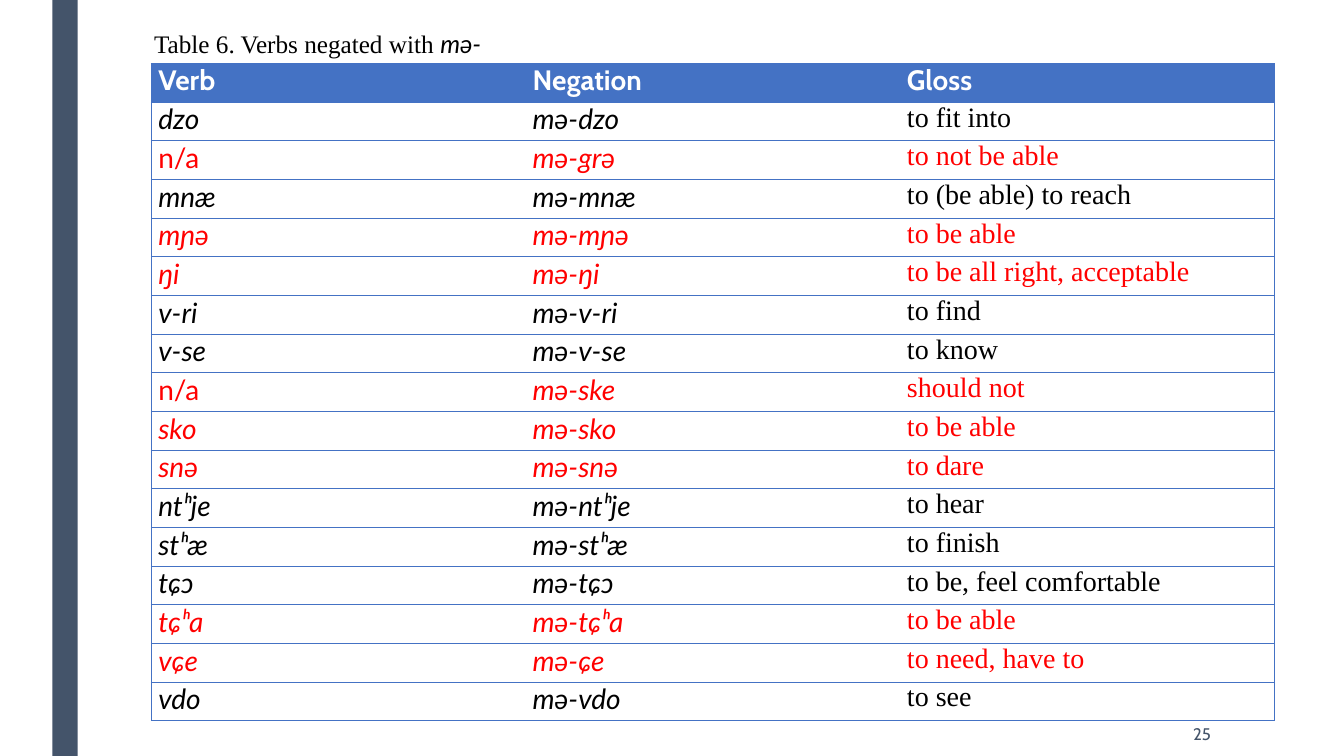
from lxml import etree
from pptx import Presentation
from pptx import util as u
from pptx.dml.color import RGBColor
from pptx.enum import shapes, text
from pptx.oxml.ns import qn

SLATE = RGBColor(0x44, 0x54, 0x6A)
BLUE = RGBColor(0x44, 0x72, 0xC4)
WHITE = RGBColor(0xFF, 0xFF, 0xFF)
BLACK = RGBColor(0, 0, 0)
RED = RGBColor(0xFF, 0, 0)

HEADINGS = ("Verb", "Negation", "Gloss")
# Verb, negated form, gloss, text colour
VERBS = [
    ("dzo", "mə-dzo", "to fit into", BLACK),
    ("n/a", "mə-grə", "to not be able", RED),
    ("mnæ", "mə-mnæ", "to (be able) to reach", BLACK),
    ("mɲə", "mə-mɲə", "to be able", RED),
    ("ŋi", "mə-ŋi", "to be all right, acceptable", RED),
    ("v-ri", "mə-v-ri", "to find", BLACK),
    ("v-se", "mə-v-se", "to know", BLACK),
    ("n/a", "mə-ske", "should not", RED),
    ("sko", "mə-sko", "to be able", RED),
    ("snə", "mə-snə", "to dare", RED),
    ("ntʰje", "mə-ntʰje", "to hear", BLACK),
    ("stʰæ", "mə-stʰæ", "to finish", BLACK),
    ("tɕɔ", "mə-tɕɔ", "to be, feel comfortable", BLACK),
    ("tɕʰa", "mə-tɕʰa", "to be able", RED),
    ("vɕe", "mə-ɕe", "to need, have to", RED),
    ("vdo", "mə-vdo", "to see", BLACK),
]


class Deck:
    """Holds the style and the current slide."""

    heading = {"name": "Cabin", "size": u.Pt(20), "bold": True, "italic": False}
    form = {"name": "Lato", "size": u.Pt(20), "bold": False, "italic": True}
    gloss = {"name": "Times New Roman", "size": u.Pt(20), "bold": False, "italic": False}
    caption = {"name": "Times New Roman", "size": u.Pt(18)}
    caption_form = {"name": "Lato", "size": u.Pt(18), "italic": True}
    number = {"name": "Cabin", "size": u.Pt(12)}
    border = u.Pt(0.5)

    def __init__(self, prs):
        self.s = prs.slides.add_slide(prs.slide_layouts[6])

    def run(self, p, words, style, color):
        r = p.add_run()
        r.text = words
        for name, value in style.items():
            setattr(r.font, name, value)
        r.font.color.rgb = color

    def bar(self, box, color):
        sp = self.s.shapes.add_shape(shapes.MSO_SHAPE.RECTANGLE, *map(u.Inches, box))
        sp.shadow.inherit = False
        sp.fill.solid()
        sp.fill.fore_color.rgb = color
        sp.line.fill.background()

    def label(self, box, runs, color, **frame):
        tf = self.s.shapes.add_textbox(*map(u.Inches, box)).text_frame
        align = frame.pop("alignment", text.PP_ALIGN.LEFT)
        for name, value in frame.items():
            setattr(tf, name, value)
        p = tf.paragraphs[0]
        p.alignment = align
        for words, style in runs:
            self.run(p, words, style, color)

    def edges(self, cell, visible):
        tc_pr = cell._tc.get_or_add_tcPr()
        for side in "LRTB":
            ln = etree.SubElement(tc_pr, qn(f"a:ln{side}"), w=str(self.border))
            if side in visible:
                fill = etree.SubElement(ln, qn("a:solidFill"))
                etree.SubElement(fill, qn("a:srgbClr"), val=str(BLUE))
            else:
                etree.SubElement(ln, qn("a:noFill"))

    def cell(self, cell, words, style, color, fill, visible):
        margins = {"margin_left": 0.07, "margin_right": 0.07,
                   "margin_top": 0, "margin_bottom": 0}
        for name, value in margins.items():
            setattr(cell, name, u.Inches(value))
        self.edges(cell, visible)
        cell.fill.solid()
        cell.fill.fore_color.rgb = fill
        p = cell.text_frame.paragraphs[0]
        p.alignment = text.PP_ALIGN.JUSTIFY
        self.run(p, words, style, color)

    def verb_table(self, box, headings, verbs):
        rows, cols = len(verbs) + 1, len(headings)
        table = self.s.shapes.add_table(rows, cols, *map(u.Inches, box)).table
        table.horz_banding = False
        sides = ("LTB", "TB", "RTB")
        for col, words in enumerate(headings):
            self.cell(table.cell(0, col), words, self.heading, WHITE, BLUE, sides[col])
        for row, (*entries, color) in enumerate(verbs, 1):
            for col, words in enumerate(entries):
                style = self.gloss if col == 2 else self.form
                if words == "n/a":
                    style = {**style, "italic": False}
                self.cell(table.cell(row, col), words, style, color, WHITE, sides[col])


def main():
    prs = Presentation()
    prs.slide_width, prs.slide_height = u.Inches(13.33), u.Inches(7.5)
    deck = Deck(prs)

    # Side bar
    deck.bar((0.52, 0, 0.25, 7.5), SLATE)

    # Verb table
    deck.verb_table((1.5, 0.63, 11.14, 6.52), HEADINGS, VERBS)

    # Slide number
    deck.label((10.36, 7.06, 1.75, 0.44), [("25", deck.number)], SLATE,
               word_wrap=True, vertical_anchor=text.MSO_ANCHOR.MIDDLE,
               alignment=text.PP_ALIGN.RIGHT)

    # Table caption
    deck.label((1.43, 0.23, 3.45, 0.4),
               [("Table 6. Verbs negated with ", deck.caption), ("mə-", deck.caption_form)],
               BLACK, word_wrap=False, auto_size=text.MSO_AUTO_SIZE.SHAPE_TO_FIT_TEXT)

    prs.save("out.pptx")


if __name__ == "__main__":
    main()
